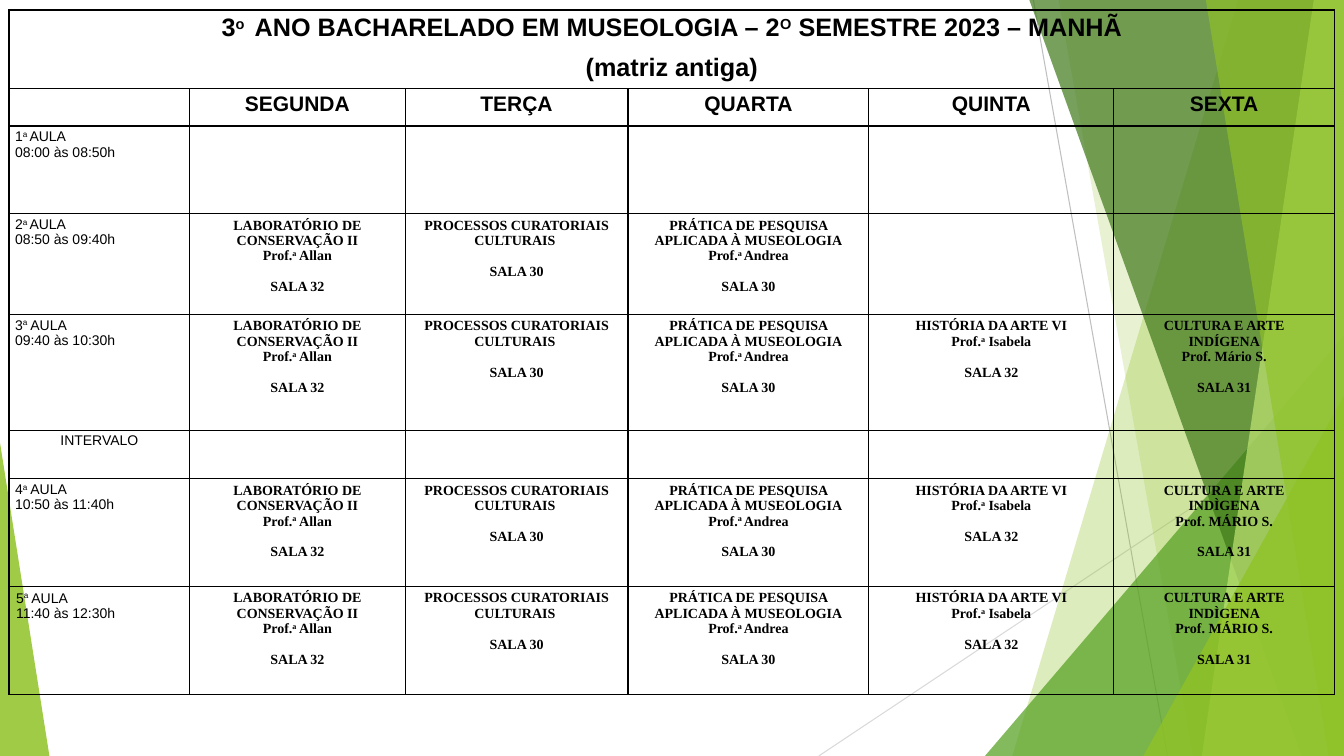
"""Build the weekly class timetable slide for the third-year museology morning course."""
from lxml import etree
from pptx import Presentation
from pptx.dml.color import RGBColor
from pptx.enum.shapes import MSO_CONNECTOR, MSO_SHAPE
from pptx.enum.text import PP_ALIGN
from pptx.oxml.ns import qn
from pptx.util import Inches, Pt

LEFT, CENTER = PP_ALIGN.LEFT, PP_ALIGN.CENTER
STRAIGHT, TRIANGLE = MSO_CONNECTOR.STRAIGHT, MSO_SHAPE.ISOSCELES_TRIANGLE
BLACK = RGBColor(0x00, 0x00, 0x00)
GRAY = RGBColor(0xBF, 0xBF, 0xBF)
LIGHT_GRAY = RGBColor(0xD9, 0xD9, 0xD9)
LIME = RGBColor(0x90, 0xC2, 0x26)
PALE_LIME = RGBColor(0xC0, 0xE4, 0x74)
GREEN = RGBColor(0x54, 0xA0, 0x21)
DARK_GREEN = RGBColor(0x3F, 0x78, 0x19)

prs = Presentation()
prs.slide_width, prs.slide_height = W, H = Inches(13.333), Inches(7.5)
s = prs.slides.add_slide(prs.slide_layouts[6])


def share(px, py):
    """Turn percentages of the slide's size into a point."""
    return round(W * px / 100), round(H * py / 100)


def write(cell, lines, font, size, bold, align, after=0):
    """Fill a cell with paragraphs; text between ^ marks is superscript."""
    tf = cell.text_frame
    for i, line in enumerate(lines):
        p = tf.paragraphs[0] if i == 0 else tf.add_paragraph()
        p.alignment = align
        p.space_after = Pt(after)
        p.font.name, p.font.size, p.font.bold = font, Pt(size), bold
        p.font.color.rgb = BLACK
        if line.startswith("SALA"):
            p.space_before = Pt(11)
        for j, part in enumerate(line.split("^")):
            if part:
                r = p.add_run()
                r.text = part
                if j % 2:
                    r.font._element.set("baseline", "30000")


for start, end, color in [((76.89, 0), (86.87, 100), GRAY),
                          ((100, 53.73), (60.92, 100), LIGHT_GRAY)]:
    ln = s.shapes.add_connector(STRAIGHT, *share(*start), *share(*end))
    ln.line.color.rgb = color
    ln.line.width = Pt(0.75)
    etree.SubElement(ln._element.spPr, qn("a:effectLst"))

# Each facet: outline kind, its position in percent, colour and opacity
facets = [
    ("band", (92.12, 75.32), LIME, 30),
    ("band", (78.77, 88.75), LIME, 20),
    ("triangle", (73.29, 44.4, 26.71, 1), GREEN, 72),
    ("band", (76.59, 96.85), DARK_GREEN, 70),
    ("band", (97.75, 89.42), PALE_LIME, 70),
    ("band", (89.72, 98.87), LIME, 65),
    ("triangle", (85.07, 52.4, 14.93, 1), LIME, 80),
    ("triangle", (0, 58.53, 3.68, 0), LIME, 85),
]
for kind, place, color, opacity in facets:
    if kind == "band":
        top_x, bottom_x = place
        fb = s.shapes.build_freeform(*share(top_x, 0))
        fb.add_line_segments([share(100, 0), share(100, 100), share(bottom_x, 100)])
        sp = fb.convert_to_shape()
    else:
        left, top, width, apex = place
        sp = s.shapes.add_shape(TRIANGLE, *share(left, top), *share(width, 100 - top))
        sp.adjustments[0] = apex
    sp.shadow.inherit = False
    sp.line.fill.background()
    sp.fill.solid()
    sp.fill.fore_color.rgb = color
    clr = sp._element.spPr.find(qn("a:solidFill"))[0]
    etree.SubElement(clr, qn("a:alpha"), val=str(opacity * 1000))

title = ["3^o ^ ANO BACHARELADO EM MUSEOLOGIA – 2^O^ SEMESTRE 2023 – MANHÃ", "(matriz antiga)"]
days = ["SEGUNDA", "TERÇA", "QUARTA", "QUINTA", "SEXTA"]
lab = ["LABORATÓRIO DE CONSERVAÇÃO II", "Prof.^a^ Allan", "SALA 32"]
curation = ["PROCESSOS CURATORIAIS CULTURAIS ", "SALA 30"]
research = ["PRÁTICA DE PESQUISA APLICADA À MUSEOLOGIA", "Prof.^a ^Andrea", "SALA 30"]
art = ["HISTÓRIA DA ARTE VI", "Prof.^a^ Isabela", "SALA 32"]
culture = ["CULTURA E ARTE", "INDÍGENA", "Prof. Mário S.", "SALA 31"]
culture_late = ["CULTURA E ARTE", "INDÌGENA", "Prof. MÁRIO S.", "SALA 31"]
early = [lab, curation, research]
late = early + [art, culture_late]
lessons = [
    (["1^a ^AULA", "08:00 às 08:50h"], []),
    (["2^a ^AULA", "08:50 às 09:40h"], early),
    (["3^a^ AULA", "09:40 às 10:30h"], early + [art, culture]),
    (["INTERVALO"], []),
    (["4^a^ AULA", "10:50 às 11:40h"], late),
    (["5^a^ AULA", "11:40 às 12:30h"], late),
]
col_widths = [1.79, 2.14, 2.21, 2.39, 2.43, 2.19]
row_heights = [0.78, 0.37, 0.87, 1, 1.15, 0.48, 1.07, 1.07]

tbl = s.shapes.add_table(len(row_heights), len(col_widths), Inches(0.09), Inches(0.1),
                         Inches(sum(col_widths)), Inches(sum(row_heights))).table
tbl.first_row = tbl.horz_banding = False
for col, width in zip(tbl.columns, col_widths):
    col.width = Inches(width)
for row, height in zip(tbl.rows, row_heights):
    row.height = Inches(height)

for cell in tbl.iter_cells():
    cell.margin_left = cell.margin_right = Inches(0.07)
    cell.margin_top = cell.margin_bottom = Inches(0.04)
    tcPr = cell._tc.get_or_add_tcPr()
    for side in ("a:lnL", "a:lnR", "a:lnT", "a:lnB"):
        border = etree.SubElement(tcPr, qn(side), w=str(Pt(1)))
        fill = etree.SubElement(border, qn("a:solidFill"))
        etree.SubElement(fill, qn("a:srgbClr"), val=str(BLACK))
    cell.fill.background()

tbl.cell(0, 0).merge(tbl.cell(0, len(days)))
write(tbl.cell(0, 0), title, "Arial", 18, True, CENTER, after=8)
for c, day in enumerate([""] + days):
    write(tbl.cell(1, c), [day], "Arial", 15, True, CENTER)
for r, (slot, classes) in enumerate(lessons, 2):
    write(tbl.cell(r, 0), slot, "Arial", 10, False, CENTER if len(slot) == 1 else LEFT)
    for c in range(1, len(days) + 1):
        lines = classes[c - 1] if c <= len(classes) else [""]
        write(tbl.cell(r, c), lines, "Times New Roman", 10, True, CENTER)
for r in range(2, len(row_heights) - 1):
    hour = tbl.cell(r, 0)
    hour.margin_left = hour.margin_right = Inches(0.06)
    hour.margin_top = hour.margin_bottom = Inches(0.03)

prs.save("out.pptx")
